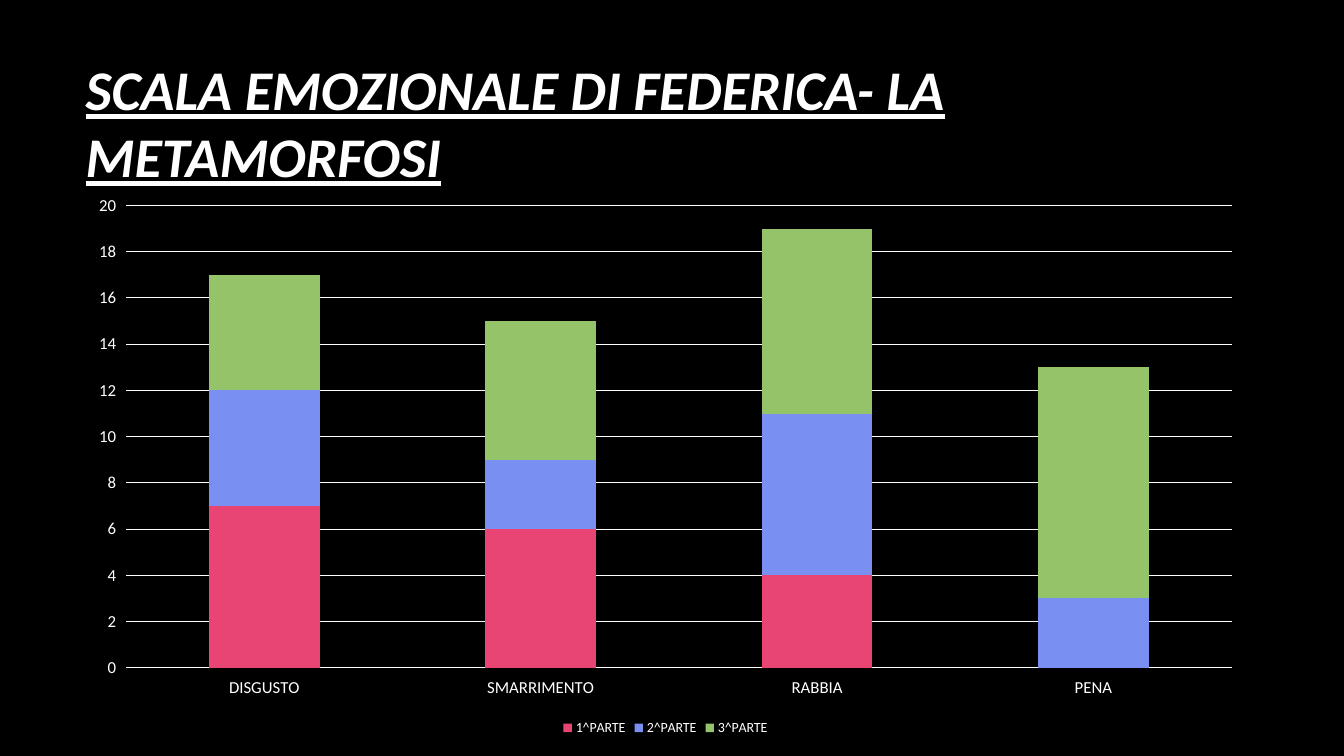
from dataclasses import dataclass

from pptx import Presentation
from pptx.chart.data import CategoryChartData
from pptx.dml.color import RGBColor
from pptx.enum.chart import XL_CHART_TYPE, XL_LEGEND_POSITION, XL_TICK_MARK
from pptx.enum.text import MSO_ANCHOR, MSO_AUTO_SIZE, PP_ALIGN
from pptx.util import Inches, Pt


@dataclass(frozen=True)
class Theme:
    """Colours, font and type sizes of the slide."""

    background: RGBColor = RGBColor.from_string("000000")
    text: RGBColor = RGBColor.from_string("FFFFFF")
    series_colors: tuple = tuple(map(RGBColor.from_string, ("E84574", "798FF2", "95C369")))
    font: str = "Calibri"
    title_size: int = 40
    axis_size: int = 12
    legend_size: int = 10


THEME = Theme()
TITLE = "SCALA EMOZIONALE DI FEDERICA- LA METAMORFOSI"
EMOTIONS = ("DISGUSTO", "SMARRIMENTO", "RABBIA", "PENA")
SCORES = {
    "1^PARTE": (7, 6, 4, 0),
    "2^PARTE": (5, 3, 7, 3),
    "3^PARTE": (5, 6, 8, 10),
}


def set_attributes(target, values):
    """Set each named attribute of the target."""
    for name, value in values.items():
        setattr(target, name, value)


def format_font(font, size, **styles):
    """Apply the theme font at a size with optional styles."""
    set_attributes(font, {"name": THEME.font, "size": Pt(size), **styles})
    font.color.rgb = THEME.text


def place_title(slide, left, top, width, height):
    """Fill the title placeholder and fit it to the box."""
    title = slide.shapes.title
    set_attributes(title, {"left": left, "top": top, "width": width, "height": height})
    frame = title.text_frame
    frame.text = TITLE
    set_attributes(frame, {
        "word_wrap": True,
        "auto_size": MSO_AUTO_SIZE.NONE,
        "vertical_anchor": MSO_ANCHOR.MIDDLE,
    })
    paragraph = frame.paragraphs[0]
    paragraph.alignment = PP_ALIGN.LEFT
    format_font(paragraph.runs[0].font, THEME.title_size,
                bold=True, italic=True, underline=True)


def format_axis(axis):
    """Give an axis light labels and no line."""
    axis.major_tick_mark = XL_TICK_MARK.OUTSIDE
    axis.minor_tick_mark = XL_TICK_MARK.NONE
    axis.format.line.fill.background()
    format_font(axis.tick_labels.font, THEME.axis_size)


def place_chart(slide, left, top, width, height):
    """Draw the stacked emotion scores inside the box."""
    data = CategoryChartData(number_format="General")
    data.categories = EMOTIONS
    for name, scores in SCORES.items():
        data.add_series(name, scores)
    chart = slide.shapes.add_chart(
        XL_CHART_TYPE.COLUMN_STACKED, left, top, width, height, data).chart
    set_attributes(chart, {"has_title": False, "has_legend": True})
    format_font(chart.font, THEME.legend_size)

    set_attributes(chart.legend, {
        "position": XL_LEGEND_POSITION.BOTTOM, "include_in_layout": False})
    format_font(chart.legend.font, THEME.legend_size)

    plot = chart.plots[0]
    set_attributes(plot, {"gap_width": 150, "overlap": 100, "vary_by_categories": False})
    for series, color in zip(plot.series, THEME.series_colors):
        series.format.fill.solid()
        series.format.fill.fore_color.rgb = color

    for axis in (chart.category_axis, chart.value_axis):
        format_axis(axis)
    set_attributes(chart.value_axis, {
        "minimum_scale": 0, "maximum_scale": 20, "major_unit": 2,
        "has_major_gridlines": True})
    gridline = chart.value_axis.major_gridlines.format.line
    gridline.width = Pt(0.75)
    gridline.color.rgb = THEME.text


def build_chart_slide(presentation):
    """Add the slide with its title above the chart."""
    slide = presentation.slides.add_slide(presentation.slide_layouts[5])
    slide.background.fill.solid()
    slide.background.fill.fore_color.rgb = THEME.background
    place_title(slide, Inches(0.75), Inches(0.16), Inches(11.08), Inches(2.1))
    place_chart(slide, Inches(0.75), Inches(1.83), Inches(11.7), Inches(5.51))


def main():
    """Build and save the presentation."""
    presentation = Presentation()
    set_attributes(presentation, {
        "slide_width": Inches(13.33), "slide_height": Inches(7.5)})
    build_chart_slide(presentation)
    presentation.save("out.pptx")


if __name__ == "__main__":
    main()
